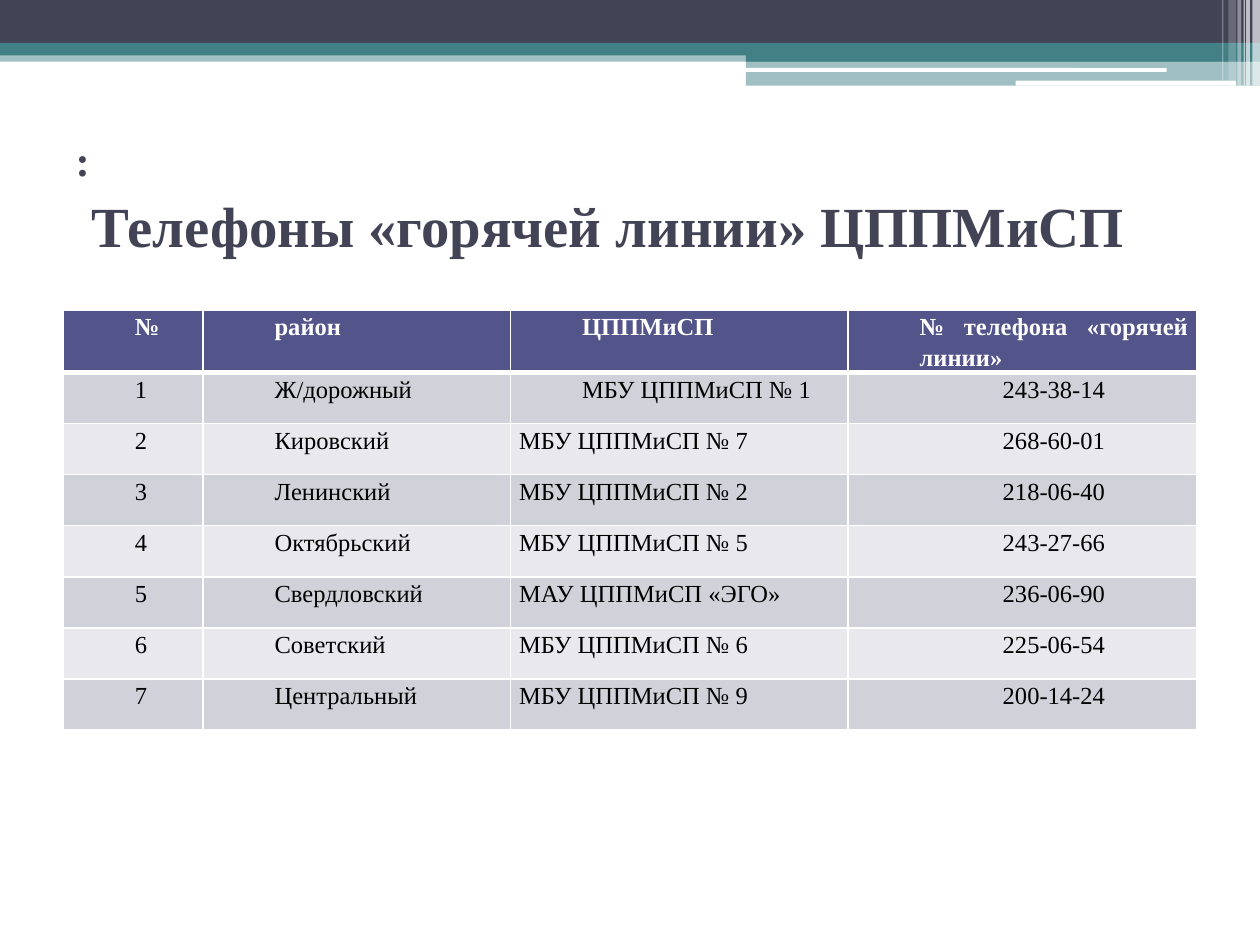
from lxml.etree import SubElement
from pptx import Presentation
from pptx.dml.color import RGBColor
from pptx.enum.shapes import MSO_SHAPE
from pptx.enum.text import MSO_ANCHOR, MSO_AUTO_SIZE, PP_ALIGN
from pptx.oxml.ns import qn
from pptx.util import Inches, Pt

COLORS = {
    "dark": "424456",
    "teal": "438086",
    "white": "FFFFFF",
    "black": "000000",
    "header": "53548A",
    "odd": "D1D1DA",
    "even": "E9E9ED",
}
FONT = "Times New Roman"

BANDS = [
    (0, 0.4, 10, 0.09, "teal", 50),
    (0, 0, 10, 0.34, "dark", 100),
    (0, 0.34, 10, 0.1, "teal", 100),
    (5.92, 0.39, 4.08, 0.1, "teal", 100),
    (5.92, 0.48, 4.08, 0.2, "teal", 50),
]
PILLS = [(5.91, 0.54, 3.35, 0.03), (8.06, 0.64, 1.75, 0.04)]
STRIPES = [
    (9.94, 0.06, 0.68, 65),
    (9.89, 0.03, 0.68, 65),
    (9.87, 0.01, 0.68, 60),
    (9.82, 0.03, 0.68, 40),
    (9.75, 0.06, 0.64, 20),
    (9.7, 0.01, 0.64, 30),
]

COL_WIDTHS = [1.11, 2.44, 2.68, 2.77]
HEADERS = ["№", "район", "ЦППМиСП", "№ телефона «горячей линии»"]
CENTERS = [
    ("Ж/дорожный", "МБУ ЦППМиСП № 1", "243-38-14"),
    ("Кировский", "МБУ ЦППМиСП № 7", "268-60-01"),
    ("Ленинский", "МБУ ЦППМиСП № 2", "218-06-40"),
    ("Октябрьский", "МБУ ЦППМиСП № 5", "243-27-66"),
    ("Свердловский", "МАУ ЦППМиСП «ЭГО»", "236-06-90"),
    ("Советский", "МБУ ЦППМиСП № 6", "225-06-54"),
    ("Центральный", "МБУ ЦППМиСП № 9", "200-14-24"),
]
ALIGNS = [PP_ALIGN.JUSTIFY, PP_ALIGN.JUSTIFY, PP_ALIGN.LEFT, PP_ALIGN.CENTER]


def rgb(name):
    return RGBColor.from_string(COLORS[name])


def add_bar(s, x, y, w, h, color, opacity=100, kind=MSO_SHAPE.RECTANGLE):
    sp = s.shapes.add_shape(kind, Inches(x), Inches(y), Inches(w), Inches(h))
    sp.shadow.inherit = False
    sp.line.fill.background()
    sp.fill.solid()
    sp.fill.fore_color.rgb = rgb(color)
    if opacity < 100:
        clr = sp.fill._xPr.find(qn("a:solidFill"))[0]
        SubElement(clr, qn("a:alpha"), val=str(opacity * 1000))


def add_run(p, text, size, color, bold=False, font=FONT):
    r = p.add_run()
    r.text = text
    r.font.name = font
    r.font.size = Pt(size)
    r.font.bold = bold
    r.font.color.rgb = rgb(color)


def add_banner(s):
    for band in BANDS:
        add_bar(s, *band)
    for pill in PILLS:
        add_bar(s, *pill, "white", kind=MSO_SHAPE.ROUNDED_RECTANGLE)
    for x, w, h, opacity in STRIPES:
        add_bar(s, x, 0, w, h, "white", opacity)


def add_title(s):
    title = s.shapes.title
    title.left, title.top = Inches(0.5), Inches(1.25)
    title.width, title.height = Inches(9), Inches(1.17)
    tf = title.text_frame
    tf.word_wrap = True
    tf.auto_size = MSO_AUTO_SIZE.NONE
    tf.vertical_anchor = MSO_ANCHOR.MIDDLE
    tf.margin_top, tf.margin_bottom = 0, Inches(0.54)
    p = tf.paragraphs[0]
    p.alignment = PP_ALIGN.LEFT
    add_run(p, ":", 24.3, "dark", bold=True)
    p.add_line_break()
    add_run(p, " ", 36, "dark", font="Lato")
    add_run(p, "Телефоны «горячей линии» ЦППМиСП", 32.4, "dark", bold=True)


def set_borders(cell, bottom):
    tc_pr = cell._tc.get_or_add_tcPr()
    for side, width in (("L", 1), ("R", 1), ("T", 1), ("B", bottom)):
        ln = SubElement(tc_pr, qn(f"a:ln{side}"), w=str(Pt(width)))
        fill = SubElement(ln, qn("a:solidFill"))
        SubElement(fill, qn("a:srgbClr"), val=COLORS["white"])


def fill_cell(cell, text, fill, align, indent, header):
    set_borders(cell, 3 if header else 1)
    cell.fill.solid()
    cell.fill.fore_color.rgb = rgb(fill)
    cell.margin_left = cell.margin_right = Inches(0.07)
    cell.margin_top = cell.margin_bottom = 0
    p = cell.text_frame.paragraphs[0]
    p.alignment = align
    p.line_spacing = 1.15
    p._p.get_or_add_pPr().set("marL", str(Inches(indent)))
    add_run(p, text, 14, "white" if header else "black", bold=header)


def add_phone_table(s):
    rows = [HEADERS] + [(str(n), *c) for n, c in enumerate(CENTERS, 1)]
    table = s.shapes.add_table(len(rows), len(HEADERS), Inches(0.5), Inches(2.46),
                               Inches(9), Inches(3.25)).table
    for col, width in zip(table.columns, COL_WIDTHS):
        col.width = Inches(width)
    for i, row in enumerate(rows):
        header = i == 0
        fill = "header" if header else "odd" if i % 2 else "even"
        for j, text in enumerate(row):
            align = PP_ALIGN.JUSTIFY if header else ALIGNS[j]
            indent = 0 if j == 2 and i > 1 else 0.5
            fill_cell(table.cell(i, j), text, fill, align, indent, header)


def main():
    prs = Presentation()
    prs.slide_width, prs.slide_height = Inches(10), Inches(7.5)
    s = prs.slides.add_slide(prs.slide_layouts[5])
    add_banner(s)
    add_title(s)
    add_phone_table(s)
    prs.save("out.pptx")


if __name__ == "__main__":
    main()
